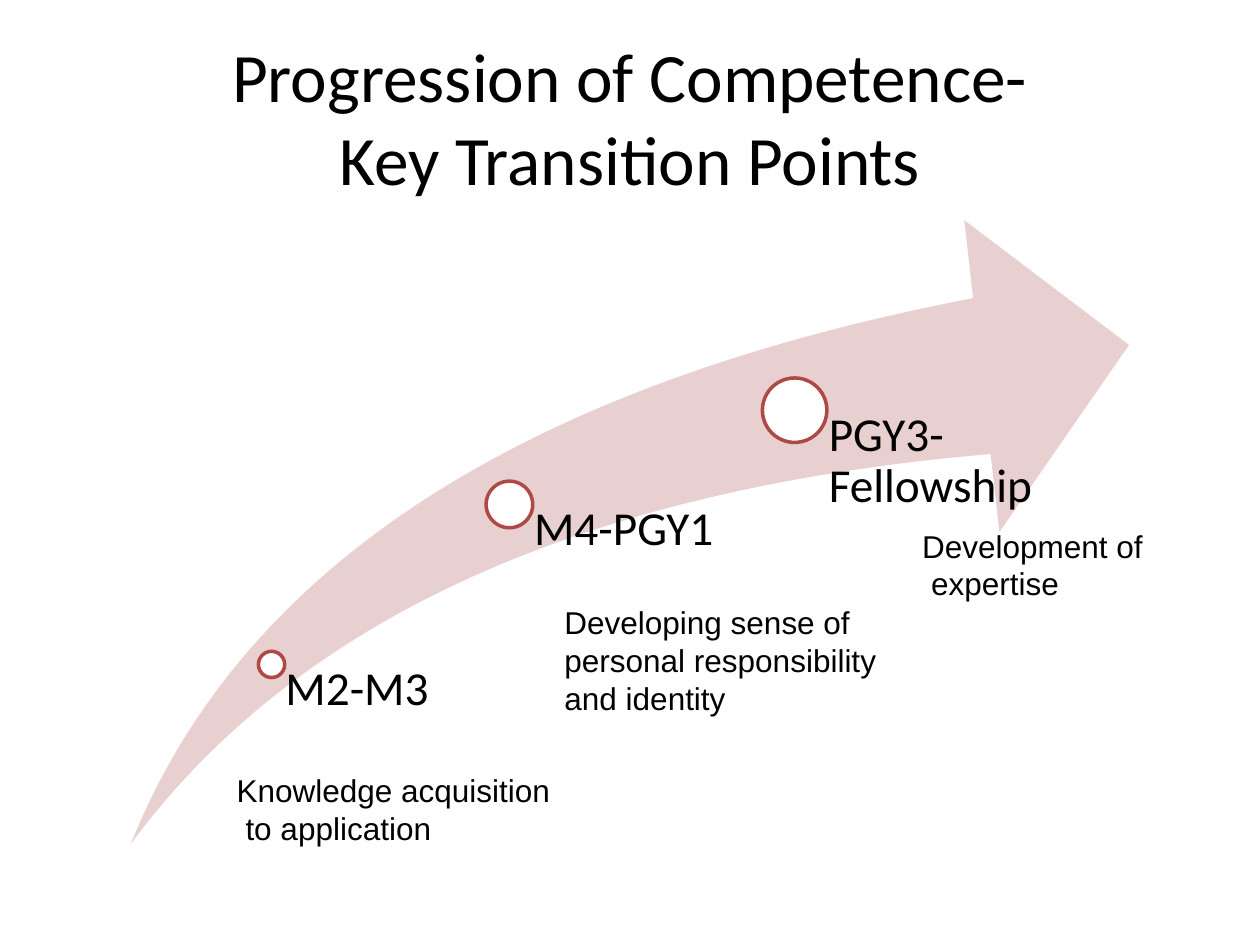
import pptx
import pptx.dml.color
import pptx.enum.shapes
import pptx.enum.text
import pptx.util

Cm = pptx.util.Cm
Pt = pptx.util.Pt
MSO_SHAPE = pptx.enum.shapes.MSO_SHAPE

BLACK = pptx.dml.color.RGBColor(0x00, 0x00, 0x00)
WHITE = pptx.dml.color.RGBColor(0xFF, 0xFF, 0xFF)
PALE_ROSE = pptx.dml.color.RGBColor(0xE8, 0xD0, 0xD0)
BRICK_RED = pptx.dml.color.RGBColor(0xAE, 0x49, 0x46)

ARROW_LEFT, ARROW_TOP, ARROW_WIDTH, ARROW_HEIGHT = 2.64, 4.44, 20.12, 12.57
ARROW_BOTTOM = ARROW_TOP + ARROW_HEIGHT


def add_text(left, top, width, height, text, font_name, font_size):
    box = slide.shapes.add_textbox(Cm(left), Cm(top), Cm(width), Cm(height))
    box.text_frame.word_wrap = True
    box.text_frame.text = text
    for paragraph in box.text_frame.paragraphs:
        for run in paragraph.runs:
            run.font.name = font_name
            run.font.size = Pt(font_size)
            run.font.color.rgb = BLACK
    return box


def add_flat_shape(kind, left, top, width, height, fill_color):
    shape = slide.shapes.add_shape(kind, Cm(left), Cm(top), Cm(width), Cm(height))
    shape.shadow.inherit = False
    shape.fill.solid()
    shape.fill.fore_color.rgb = fill_color
    shape.line.fill.background()
    return shape


presentation = pptx.Presentation()
presentation.slide_width = Cm(25.4)
presentation.slide_height = Cm(19.05)
slide = presentation.slides.add_slide(presentation.slide_layouts[6])

title = add_text(1.27, 0.76, 22.86, 3.18,
                 "Progression of Competence-\vKey Transition Points", "Calibri", 39.6)
title.text_frame.vertical_anchor = pptx.enum.text.MSO_ANCHOR.MIDDLE
title.text_frame.paragraphs[0].alignment = pptx.enum.text.PP_ALIGN.CENTER

arrow = add_flat_shape(MSO_SHAPE.SWOOSH_ARROW, ARROW_LEFT, ARROW_TOP,
                       ARROW_WIDTH, ARROW_HEIGHT, PALE_ROSE)
arrow.adjustments[0] = 0.25
arrow.adjustments[1] = 0.25

# Each label starts at the centre of its circle and runs down to the arrow's foot.
transition_points = [
    ("M2-M3", 5.21, 13.13, 0.53, 4.7),
    ("M4-PGY1", 9.8, 9.7, 0.94, 4.83),
    ("PGY3-Fellowship", 15.37, 7.62, 1.3, 4.83),
]
for name, left, top, diameter, label_width in transition_points:
    circle = add_flat_shape(MSO_SHAPE.OVAL, left, top, diameter, diameter, WHITE)
    circle.line.color.rgb = BRICK_RED
    circle.line.width = Pt(2)

    center_x = left + diameter / 2
    center_y = top + diameter / 2
    label = add_text(center_x, center_y, label_width, ARROW_BOTTOM - center_y,
                     name, "Calibri", 27)
    label.text_frame.margin_left = Cm(diameter * 0.53)
    label.text_frame.margin_top = 0
    label.text_frame.margin_right = 0
    label.text_frame.margin_bottom = 0
    label.text_frame.paragraphs[0].line_spacing = 0.9

descriptions = [
    ("Knowledge acquisition\nto application", 4.52, 15.42, 7.39, 1.8),
    ("Developing sense of personal responsibility and identity", 11.13, 12.04, 7.21, 2.57),
    ("Development of\nexpertise", 18.34, 10.49, 5.18, 1.8),
]
for text, left, top, width, height in descriptions:
    description = add_text(left, top, width, height, text, "Arial", 18)
    for paragraph in description.text_frame.paragraphs[1:]:
        paragraph._p.get_or_add_pPr().set("marL", str(Cm(0.18)))

presentation.save("out.pptx")
